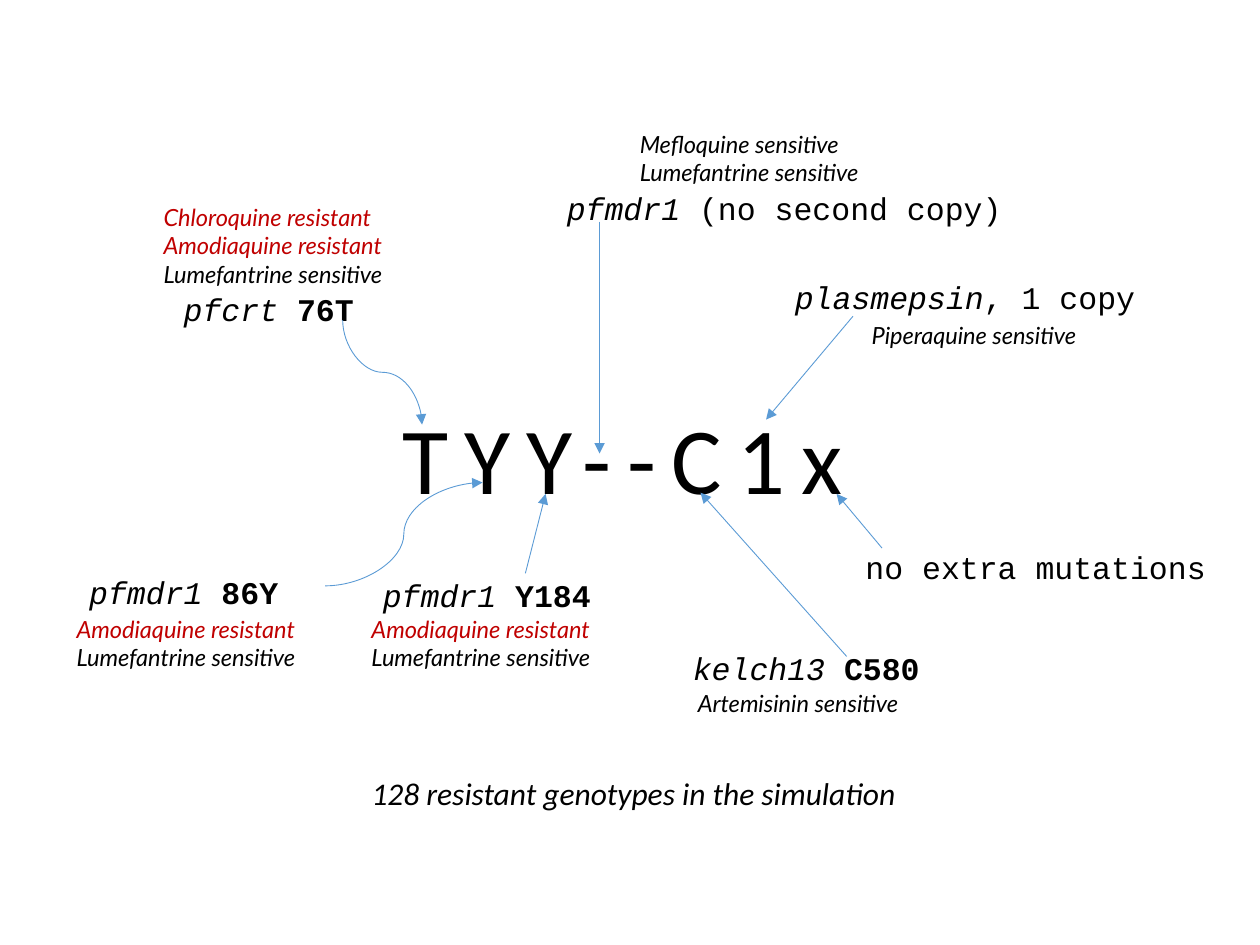
from dataclasses import dataclass

from lxml import etree
from pptx import Presentation
from pptx.dml.color import RGBColor
from pptx.enum.shapes import MSO_CONNECTOR
from pptx.enum.text import MSO_ANCHOR, MSO_AUTO_SIZE
from pptx.oxml.ns import qn
from pptx.util import Inches, Pt

STRAIGHT, CURVE = MSO_CONNECTOR.STRAIGHT, MSO_CONNECTOR.CURVE
MIDDLE = MSO_ANCHOR.MIDDLE
FIT = MSO_AUTO_SIZE.SHAPE_TO_FIT_TEXT


@dataclass(frozen=True)
class Theme:
    black: RGBColor = RGBColor(0x00, 0x00, 0x00)
    red: RGBColor = RGBColor(0xC0, 0x00, 0x00)
    blue: RGBColor = RGBColor(0x5B, 0x9B, 0xD5)
    body_font: str = "Calibri"
    gene_font: str = "Courier New"
    drug_font: str = "Lato"
    code_size: float = 54
    label_size: float = 18
    drug_size: float = 13.5
    arrow_width: float = 0.5
    code_spacing: float = 9


THEME = Theme()
GENE = {"name": THEME.gene_font, "size": Pt(THEME.label_size)}
DRUG = {"name": THEME.drug_font, "size": Pt(THEME.drug_size), "italic": True}
CODE = {"name": THEME.body_font, "size": Pt(THEME.code_size)}
CAPTION = {"name": THEME.body_font, "size": Pt(THEME.label_size), "italic": True}
ITALIC, BOLD, PLAIN = {"italic": True}, {"bold": True}, {}
DRUG_WIDTH = 2.47

# label place, spans of the label, arrow kind, arrow start, arrow end
LOCI = [
    ((1.36, 2.25, 1.56, 0.4), [("pfcrt ", ITALIC), ("76T", BOLD)],
     "down curve", (2.72, 2.54), (3.35, 3.37)),
    ((4.4, 1.45, 3.67, 0.4), [("pfmdr1", ITALIC), (" (no second copy)", PLAIN)],
     "down curve", (4.76, 1.76), (4.76, 3.6)),
    ((6.21, 2.16, 2.91, 0.4), [("plasmepsin", ITALIC), (", 1 copy", PLAIN)],
     "straight", (6.77, 2.51), (6.08, 3.33)),
    ((0.61, 4.5, 2.03, 0.4), [("pfmdr1 ", ITALIC), ("86Y", BOLD)],
     "side curve", (2.58, 4.65), (3.83, 3.83)),
    ((2.94, 4.52, 1.86, 0.4), [("pfmdr1 ", ITALIC), ("Y184", BOLD)],
     "straight", (4.17, 4.55), (4.33, 3.92)),
    ((5.4, 5.1, 2.01, 0.4), [("kelch13 ", ITALIC), ("C580", BOLD)],
     "straight", (6.72, 5.21), (5.56, 3.91)),
    ((6.77, 4.3, 2.91, 0.4), [("no extra mutations", PLAIN)],
     "straight", (7, 4.35), (6.64, 3.92)),
]

# left, top, height, drug responses
RESPONSES = [
    (0.51, 4.83, 0.56, ["Amodiaquine resistant", "Lumefantrine sensitive"]),
    (5.44, 5.42, 0.33, ["Artemisinin sensitive"]),
    (1.2, 1.56, 0.78, ["Chloroquine resistant", "Amodiaquine resistant",
                       "Lumefantrine sensitive"]),
    (2.85, 4.83, 0.56, ["Amodiaquine resistant", "Lumefantrine sensitive"]),
    (6.82, 2.5, 0.33, ["Piperaquine sensitive"]),
    (4.98, 0.98, 0.56, ["Mefloquine sensitive", "Lumefantrine sensitive"]),
]


def add_text(shapes, place, lines, base, wrap=False):
    """Add a text box; each line is a list of (text, format) spans over base."""
    box = shapes.add_textbox(*map(Inches, place))
    frame = box.text_frame
    frame.word_wrap, frame.auto_size = wrap, FIT
    for index, spans in enumerate(lines):
        para = frame.add_paragraph() if index else frame.paragraphs[0]
        for text, extra in spans:
            span = para.add_run()
            span.text = text
            values = {**base, **extra}
            span.font.color.rgb = values.pop("color", THEME.black)
            for name, value in values.items():
                setattr(span.font, name, value)
    return box


def turn_downward(arrow, start, end):
    """Make a curve leave and arrive vertically: a mirrored quarter turn."""
    (x1, y1), (x2, y2) = start, end
    width, height = abs(y2 - y1), abs(x2 - x1)
    arrow.left = Inches((x1 + x2 - width) / 2)
    arrow.top = Inches((y1 + y2 - height) / 2)
    arrow.width, arrow.height = Inches(width), Inches(height)
    frame = arrow._element.spPr.find(qn("a:xfrm"))
    frame.set("rot", str(270 * 60000))
    frame.set("flipH", "1")


def add_arrow(shapes, kind, start, end):
    shape_type = STRAIGHT if kind == "straight" else CURVE
    arrow = shapes.add_connector(shape_type, *map(Inches, (*start, *end)))
    if kind == "down curve":
        turn_downward(arrow, start, end)
    arrow.line.color.rgb = THEME.blue
    arrow.line.width = Pt(THEME.arrow_width)
    properties = arrow._element.spPr
    etree.SubElement(properties.find(qn("a:ln")), qn("a:tailEnd"), type="triangle")
    etree.SubElement(properties, qn("a:effectLst"))


def add_locus(page, place, spans, kind, start, end):
    group = page.shapes.add_group_shape()
    add_text(group.shapes, place, [spans], GENE)
    add_arrow(group.shapes, kind, start, end)


def add_responses(page, left, top, height, drugs):
    """List drug responses, with resistance in red."""
    lines = [[(drug, {"color": THEME.red} if drug.endswith("resistant") else PLAIN)]
             for drug in drugs]
    add_text(page.shapes, (left, top, DRUG_WIDTH, height), lines, DRUG, wrap=True)


def add_genotype_code(page):
    box = add_text(page.shapes, (3.1, 3.12, 3.9, 1.01), [[("TYY--C1x", PLAIN)]], CODE)
    box.text_frame.vertical_anchor = MIDDLE
    span = box.text_frame.paragraphs[0].runs[0]
    span.font._element.set("spc", str(THEME.code_spacing * 100))


def main():
    deck = Presentation()
    deck.slide_width, deck.slide_height = Inches(10), Inches(7.5)
    page = deck.slides.add_slide(deck.slide_layouts[6])
    add_text(page.shapes, (2.85, 6.09, 4.41, 0.4),
             [[("128 resistant genotypes in the simulation", PLAIN)]], CAPTION)
    add_genotype_code(page)
    for locus in LOCI:
        add_locus(page, *locus)
    for response in RESPONSES:
        add_responses(page, *response)
    deck.save("out.pptx")


if __name__ == "__main__":
    main()
